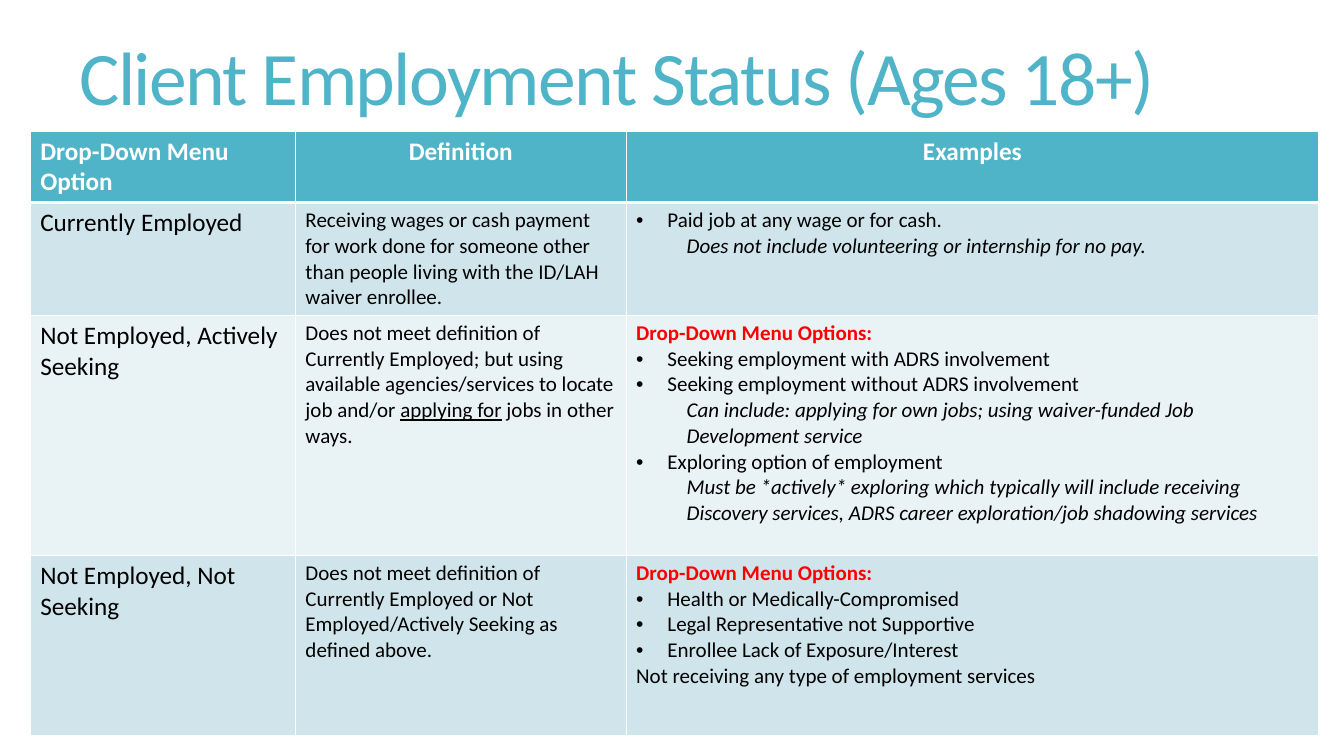
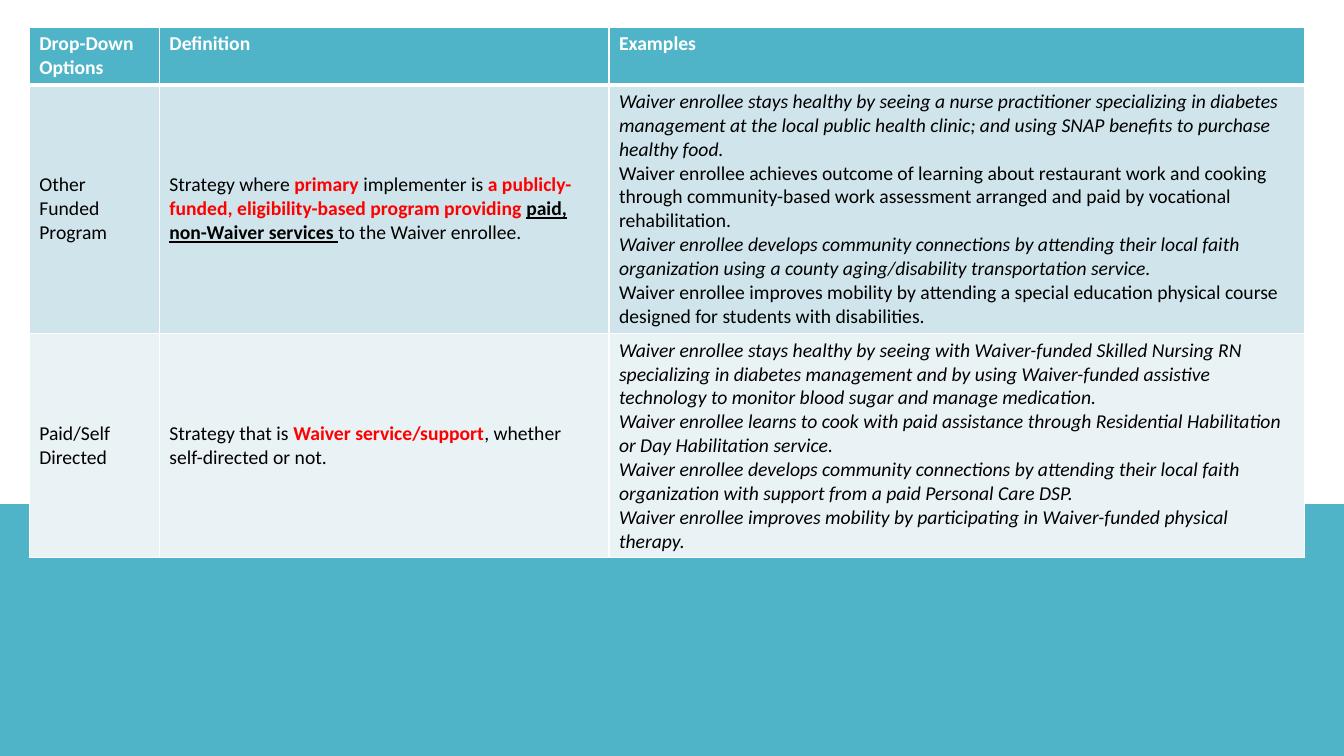
from lxml.etree import SubElement
from pptx import Presentation
from pptx.dml.color import RGBColor
from pptx.enum.shapes import MSO_SHAPE
from pptx.enum.text import MSO_ANCHOR, PP_ALIGN
from pptx.oxml.ns import qn
from pptx.util import Inches, Pt

TEAL, PALE, MIST = "50B4C8", "D0E5EB", "E9F2F5"
WHITE, BLACK, RED = "FFFFFF", "000000", "FF0000"

LOOKS = {
    "plain": {},
    "point": {},
    "head": {"bold": True, "hue": WHITE},
    "key": {"bold": True, "hue": RED},
    "note": {"italic": True},
    "slant": {"italic": True},
    "line": {"underline": True},
    "strong": {"bold": True, "underline": True},
    "title": {"hue": TEAL},
}
# Left margin and first-line indent by look of the first run
DENTS = {"point": (0.31, -0.31), "note": (0.5, 0)}


def paint(fill, hue):
    fill.solid()
    fill.fore_color.rgb = RGBColor.from_string(hue)


def write(frame, paras, size, align=PP_ALIGN.LEFT):
    """Fill a text frame; each paragraph is a list of (look, text) runs."""
    for i, runs in enumerate(paras):
        para = frame.add_paragraph() if i else frame.paragraphs[0]
        para.alignment = align
        first = runs[0][0]
        if first in DENTS:
            props = para._p.get_or_add_pPr()
            for name, dent in zip(("marL", "indent"), DENTS[first]):
                props.set(name, str(Inches(dent)))
            if first == "point":
                SubElement(props, qn("a:buFont"), typeface="Arial")
                SubElement(props, qn("a:buChar"), char="•")
        for look, text in runs:
            run = para.add_run()
            run.text = text
            font = {"name": "Calibri", "size": Pt(size), "hue": BLACK} | LOOKS[look]
            for name, value in font.items():
                if name == "hue":
                    paint(run.font.fill, value)
                else:
                    setattr(run.font, name, value)


status = [
    [[[("head", "Drop-Down Menu Option")]], [[("head", "Definition")]], [[("head", "Examples")]]],
    [
        [[("plain", "Currently Employed")]],
        [[("plain", "Receiving wages or cash payment for work done for someone other "
                    "than people living with the ID/LAH waiver enrollee.")]],
        [
            [("point", "Paid job at any wage or for cash.")],
            [("note", "Does not include volunteering or internship for no pay.")],
        ],
    ],
    [
        [[("plain", "Not Employed, Actively Seeking")]],
        [[
            ("plain", "Does not meet definition of Currently Employed; but using "
                      "available agencies/services to locate job and/or "),
            ("line", "applying for"),
            ("plain", " jobs in other ways."),
        ]],
        [
            [("key", "Drop-Down Menu Options:")],
            [("point", "Seeking employment with ADRS involvement")],
            [("point", "Seeking employment without ADRS involvement")],
            [("note", "Can include: applying for own jobs; using waiver-funded Job "
                      "Development service")],
            [("point", "Exploring option of employment")],
            [("note", "Must be *actively* exploring which typically will include receiving "
                      "Discovery services, ADRS career exploration/job shadowing services")],
        ],
    ],
    [
        [[("plain", "Not Employed, Not Seeking")]],
        [[("plain", "Does not meet definition of Currently Employed or Not "
                    "Employed/Actively Seeking as defined above.")]],
        [
            [("key", "Drop-Down Menu Options:")],
            [("point", "Health or Medically-Compromised")],
            [("point", "Legal Representative not Supportive")],
            [("point", "Enrollee Lack of Exposure/Interest")],
            [("plain", "Not receiving any type of employment services")],
        ],
    ],
]

funding = [
    [[[("head", "Drop-Down Options")]], [[("head", "Definition")]], [[("head", "Examples")]]],
    [
        [[("plain", "Other Funded Program")]],
        [[
            ("plain", "Strategy where "),
            ("key", "primary"),
            ("plain", " implementer is "),
            ("key", "a publicly-funded, eligibility-based program providing "),
            ("strong", "paid, non-Waiver services "),
            ("plain", "to the Waiver enrollee."),
        ]],
        [
            [("slant", "Waiver enrollee stays healthy by seeing a nurse practitioner "
                       "specializing in diabetes management at the local public health "
                       "clinic; and using SNAP benefits to purchase healthy food.")],
            [("plain", "Waiver enrollee achieves outcome of learning about restaurant work "
                       "and cooking through community-based work assessment arranged and "
                       "paid by vocational rehabilitation.")],
            [("slant", "Waiver enrollee develops community connections by attending their "
                       "local faith organization using a county aging/disability "
                       "transportation service.")],
            [("plain", "Waiver enrollee improves mobility by attending a special education "
                       "physical course designed for students with disabilities.")],
        ],
    ],
    [
        [[("plain", "Paid/Self Directed")]],
        [[
            ("plain", "Strategy that is "),
            ("key", "Waiver service/support"),
            ("plain", ", whether self-directed or not."),
        ]],
        [
            [("slant", "Waiver enrollee stays healthy by seeing with Waiver-funded Skilled "
                       "Nursing RN specializing in diabetes management and by using "
                       "Waiver-funded assistive technology to monitor blood sugar and "
                       "manage medication.")],
            [("slant", "Waiver enrollee learns to cook with paid assistance through "
                       "Residential Habilitation or Day Habilitation service.")],
            [("slant", "Waiver enrollee develops community connections by attending their "
                       "local faith organization with support from a paid Personal Care DSP.")],
            [("slant", "Waiver enrollee improves mobility by participating in "
                       "Waiver-funded physical therapy.")],
        ],
    ],
]

deck = Presentation()
deck.slide_width, deck.slide_height = Inches(13.33), Inches(7.5)
blank = deck.slide_layouts[6]
first, second = [deck.slides.add_slide(blank) for _ in range(2)]

# Title of the first slide
box = first.shapes.add_textbox(Inches(0.69), Inches(-0.09), Inches(11.78), Inches(1.81))
frame = box.text_frame
frame.word_wrap = True
frame.vertical_anchor = MSO_ANCHOR.MIDDLE
write(frame, [[("title", "Client Employment Status (Ages 18+)")]], 54)
title = frame.paragraphs[0]
title.line_spacing = 0.85
title.runs[0]._r.get_or_add_rPr().set("spc", "-120")

# Backdrop of the second slide
paint(second.background.fill, TEAL)
for high, hue in ((7.5, TEAL), (5, WHITE)):
    band = second.shapes.add_shape(MSO_SHAPE.RECTANGLE, 0, 0, deck.slide_width, Inches(high))
    band.shadow.inherit = False
    band.line.fill.background()
    paint(band.fill, hue)

# Tables
tables = [
    {"slide": first, "rows": status, "left": 0.3, "top": 1.3,
     "wides": (2.63, 3.28, 6.87), "highs": (0.71, 1.12, 2.38, 1.79),
     "sizes": (18, 15, 15), "top_size": 18, "anchor": MSO_ANCHOR.TOP,
     "aligns": (PP_ALIGN.LEFT, PP_ALIGN.CENTER, PP_ALIGN.CENTER)},
    {"slide": second, "rows": funding, "left": 0.29, "top": 0.27,
     "wides": (1.29, 4.46, 6.9), "highs": (0.57, 2.47, 2.22),
     "sizes": (14, 14, 14), "top_size": 14, "anchor": MSO_ANCHOR.MIDDLE,
     "aligns": (PP_ALIGN.LEFT,) * 3},
]
for plan in tables:
    wides, highs = plan["wides"], plan["highs"]
    table = plan["slide"].shapes.add_table(
        len(highs), len(wides), Inches(plan["left"]), Inches(plan["top"]),
        Inches(sum(wides)), Inches(sum(highs))).table
    table.horz_banding = False
    for col, wide in zip(table.columns, wides):
        col.width = Inches(wide)
    for r, (row, high) in enumerate(zip(plan["rows"], highs)):
        table.rows[r].height = Inches(high)
        for c, paras in enumerate(row):
            cell = table.cell(r, c)
            props = cell._tc.get_or_add_tcPr()
            # The rule below the header is thicker than the others
            edges = {"lnL": 1, "lnR": 1, "lnT": 3 if r == 1 else 1, "lnB": 1 if r else 3}
            for edge, width in edges.items():
                line = SubElement(props, qn(f"a:{edge}"), w=str(Pt(width)))
                solid = SubElement(line, qn("a:solidFill"))
                SubElement(solid, qn("a:srgbClr"), val=WHITE)
            if r == 0:
                paint(cell.fill, TEAL)
                write(cell.text_frame, paras, plan["top_size"], plan["aligns"][c])
            else:
                paint(cell.fill, PALE if r % 2 else MIST)
                cell.vertical_anchor = plan["anchor"]
                write(cell.text_frame, paras, plan["sizes"][c])

deck.save("out.pptx")
